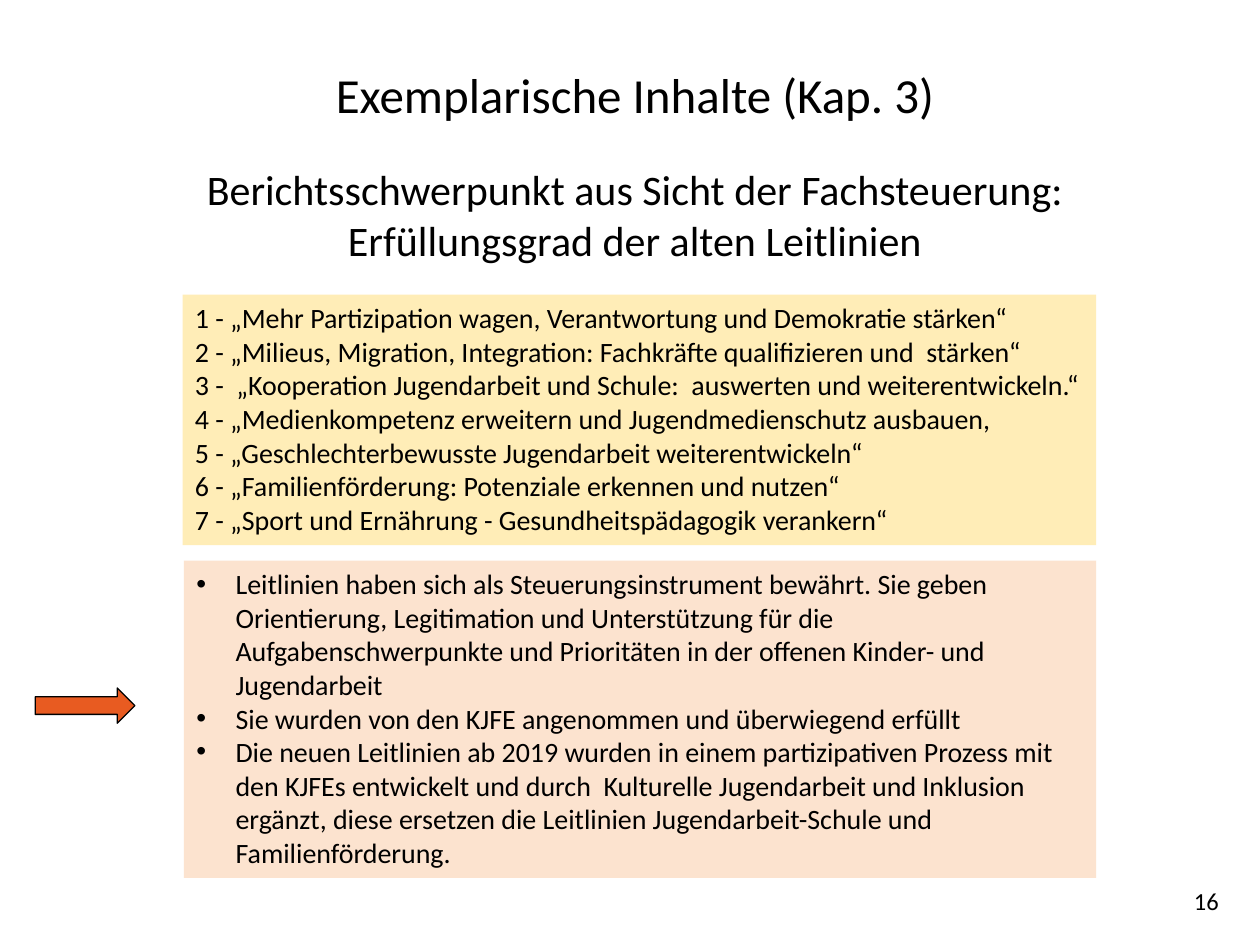
from lxml.etree import SubElement
from pptx import Presentation
from pptx.dml.color import RGBColor
from pptx.enum.shapes import MSO_SHAPE as Shape
from pptx.enum.text import MSO_ANCHOR as Anchor, PP_ALIGN as Align
from pptx.oxml.ns import qn
from pptx.util import Cm, Pt

# Content
HEADING = "Exemplarische Inhalte (Kap. 3)"
SUBHEADING = [
    "Berichtsschwerpunkt aus Sicht der Fachsteuerung:",
    "Erfüllungsgrad der alten Leitlinien",
]
GUIDELINES = [
    "1 - „Mehr Partizipation wagen, Verantwortung und Demokratie stärken“",
    "2 - „Milieus, Migration, Integration: Fachkräfte qualifizieren und  stärken“",
    "3 -  „Kooperation Jugendarbeit und Schule:  auswerten und weiterentwickeln.“",
    "4 - „Medienkompetenz erweitern und Jugendmedienschutz ausbauen,",
    "5 - „Geschlechterbewusste Jugendarbeit weiterentwickeln“",
    "6 - „Familienförderung: Potenziale erkennen und nutzen“",
    "7 - „Sport und Ernährung - Gesundheitspädagogik verankern“",
]
FINDINGS = [
    "Leitlinien haben sich als Steuerungsinstrument bewährt. Sie geben "
    "Orientierung, Legitimation und Unterstützung für die Aufgabenschwerpunkte "
    "und Prioritäten in der offenen Kinder- und Jugendarbeit",
    "Sie wurden von den KJFE angenommen und überwiegend erfüllt",
    "Die neuen Leitlinien ab 2019 wurden in einem partizipativen Prozess mit "
    "den KJFEs entwickelt und durch  Kulturelle Jugendarbeit und Inklusion "
    "ergänzt, diese ersetzen die Leitlinien Jugendarbeit-Schule und "
    "Familienförderung.",
]
PAGE_NUMBER = "16"

FONT = "Calibri"
BLACK = RGBColor(0x00, 0x00, 0x00)
YELLOW = RGBColor(0xFF, 0xED, 0xB7)
PEACH = RGBColor(0xFC, 0xE3, 0xCF)
ORANGE = RGBColor(0xE8, 0x5B, 0x21)
INDENT = Cm(0.79)


def write(shape, lines, size, align=Align.LEFT, bulleted=False):
    frame = shape.text_frame
    frame.word_wrap = True
    frame.vertical_anchor = Anchor.TOP
    frame.text = "\n".join(lines)
    for paragraph in frame.paragraphs:
        if bulleted:
            props = paragraph._p.get_or_add_pPr()
            props.set("marL", str(INDENT))
            props.set("indent", str(-INDENT))
            SubElement(props, qn("a:buFont"), typeface="Arial")
            SubElement(props, qn("a:buChar"), char="•")
        paragraph.alignment = align
        for run in paragraph.runs:
            run.font.name = FONT
            run.font.size = Pt(size)
            run.font.color.rgb = BLACK
    return frame.paragraphs


def add_filled(kind, color, left, top, width, height):
    shape = slide.shapes.add_shape(kind, Cm(left), Cm(top), Cm(width), Cm(height))
    shape.shadow.inherit = False
    shape.fill.solid()
    shape.fill.fore_color.rgb = color
    shape.line.fill.background()
    return shape


prs = Presentation()
prs.slide_width, prs.slide_height = Cm(25.4), Cm(19.05)
slide = prs.slides.add_slide(prs.slide_layouts[6])

# Heading with two-line subheading
title = slide.shapes.add_textbox(Cm(1.4), Cm(1.18), Cm(22.8), Cm(4.33))
heading = write(title, [HEADING, *SUBHEADING], 24, Align.CENTER)[0]
heading.runs[0].font.size = Pt(28)
heading.space_after = Pt(23)

# Old guidelines and findings
guidelines = add_filled(Shape.RECTANGLE, YELLOW, 3.68, 5.94, 18.42, 5.05)
write(guidelines, GUIDELINES, 16)
findings = add_filled(Shape.RECTANGLE, PEACH, 3.71, 11.3, 18.39, 6.4)
write(findings, FINDINGS, 16, bulleted=True)

# Arrow pointing at the findings
arrow = add_filled(Shape.RIGHT_ARROW, ORANGE, 0.71, 13.87, 2.01, 0.71)
arrow.line.color.rgb = BLACK
arrow.line.width = Pt(0.75)

# Page number
page = slide.shapes.add_textbox(Cm(18.9), Cm(17.73), Cm(5.92), Cm(1.32))
write(page, [PAGE_NUMBER], 14, Align.RIGHT)

prs.save("out.pptx")
